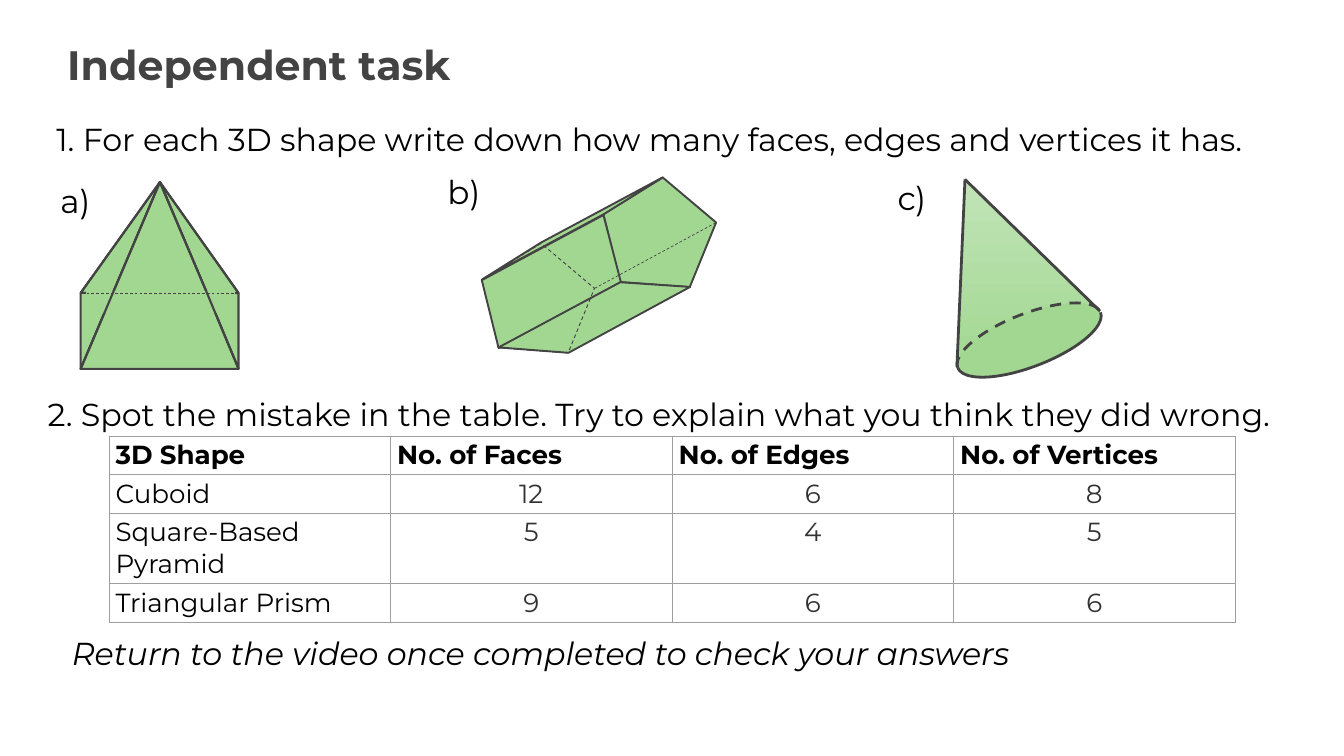
"""Build the independent task slide on faces, edges and vertices of 3D shapes."""
from lxml import etree
from pptx import Presentation
from pptx.dml.color import RGBColor
from pptx.enum.dml import MSO_LINE
from pptx.enum.shapes import MSO_CONNECTOR, MSO_SHAPE
from pptx.enum.text import MSO_ANCHOR, MSO_AUTO_SIZE, PP_ALIGN
from pptx.oxml import parse_xml
from pptx.oxml.ns import nsdecls, qn
from pptx.util import Inches, Pt

FONT = "Montserrat"
BLACK = RGBColor(0x00, 0x00, 0x00)
DARK = RGBColor(0x43, 0x43, 0x43)
NUMBER = RGBColor(0x32, 0x32, 0x32)
GREEN = RGBColor(0xA2, 0xD7, 0x92)
CONE_TOP = RGBColor(0xC0, 0xE4, 0xB6)
CONE_BASE = RGBColor(0xA3, 0xD8, 0x93)
BORDER = RGBColor(0x9E, 0x9E, 0x9E)
LEFT, CENTER = PP_ALIGN.LEFT, PP_ALIGN.CENTER
TOP, NO_FIT = MSO_ANCHOR.TOP, MSO_AUTO_SIZE.NONE
DASH, STRAIGHT = MSO_LINE.DASH, MSO_CONNECTOR.STRAIGHT
PENTAGON, RECTANGLE = MSO_SHAPE.REGULAR_PENTAGON, MSO_SHAPE.RECTANGLE
ELLIPSE, ARC = MSO_SHAPE.OVAL, MSO_SHAPE.ARC
ARC_UNITS_PER_DEGREE = 0.6


def write(frame, text, spacing=1.0, align=LEFT, **formats):
    para = frame.paragraphs[0]
    para.alignment = align
    para.line_spacing = spacing
    span = para.add_run()
    span.text = text
    span.font.color.rgb = formats.pop("color")
    for name, value in {"name": FONT, "bold": False, **formats}.items():
        setattr(span.font, name, value)


def draw(kind, geometry, fill=None, line=DARK, width=0, dash=None):
    if kind == "edge":
        start, end = geometry
        shape = shapes.add_connector(STRAIGHT, *map(Inches, start + end))
        etree.SubElement(shape._element.spPr, qn("a:effectLst"))
    else:
        if kind in ("face", "path"):
            corners = [(Inches(x), Inches(y)) for x, y in geometry]
            builder = shapes.build_freeform(*corners[0])
            builder.add_line_segments(corners[1:], close=kind == "face")
            shape = builder.convert_to_shape()
        else:
            shape = shapes.add_shape(kind, *map(Inches, geometry))
        shape.shadow.inherit = False
        if fill is None:
            shape.fill.background()
        else:
            shape.fill.solid()
            shape.fill.fore_color.rgb = fill
    if width:
        shape.line.color.rgb = line
        shape.line.width = Pt(width)
        shape.line.dash_style = dash
    else:
        shape.line.fill.background()
    return shape


deck = Presentation()
deck.slide_width, deck.slide_height = Inches(20), Inches(11.25)
page = deck.slides.add_slide(deck.slide_layouts[5])
shapes = page.shapes

title = shapes.title
title.left, title.top, title.width, title.height = map(Inches, (1, 0.47, 14.44, 1.78))
title_format = {"margin_left": 0, "margin_top": 0, "margin_right": 0, "margin_bottom": 0,
                "vertical_anchor": TOP, "auto_size": NO_FIT, "word_wrap": True}
for name, value in title_format.items():
    setattr(title.text_frame, name, value)
write(title.text_frame, "Independent task", 1.15, size=Pt(44), bold=True, color=DARK)

apex = (2.38, 2.71)
back_left, inner_left, inner_right, back_right = [(x, 4.36) for x in (1.2, 1.68, 3.08, 3.55)]
front_left, front_right = (1.2, 5.49), (3.55, 5.49)
pyramid_faces = [
    [front_right, inner_right, back_right],
    [back_left, apex, inner_left],
    [inner_left, front_left, back_left],
    [apex, back_right, inner_right],
    [inner_right, inner_left, apex],
    [inner_right, front_right, front_left, inner_left],
]
for face in pyramid_faces:
    draw("face", face, GREEN, width=2.25)
for corner in (back_left, back_right):
    draw("edge", (apex, corner), width=2.25)
draw(RECTANGLE, (1.3, 4.34, 2.18, 0.31), GREEN, line=GREEN, width=2)
for front_edge in ([apex, inner_right, front_right], [apex, inner_left, front_left]):
    draw("path", front_edge, GREEN, width=2.25)
draw("edge", (back_right, back_left), width=0.75, dash=DASH)

PRISM_TURN = 292.2
near_end = draw(PENTAGON, (8.88, 2.69, 1.68, 1.6), GREEN, width=2)
prism_faces = [
    [(7.17, 4.16), (8.98, 3.19), (9.86, 2.64), (8.05, 3.61)],
    [(7.17, 4.17), (7.42, 5.18), (9.24, 4.2), (8.98, 3.2)],
    [(7.42, 5.17), (8.46, 5.25), (10.27, 4.27), (9.23, 4.2)],
]
for face in prism_faces:
    draw("face", face, GREEN, width=2)
far_end = draw(PENTAGON, (7.07, 3.67, 1.68, 1.6), width=1, dash=DASH)
for end in (near_end, far_end):
    end.rotation = PRISM_TURN
draw("edge", ((8.85, 4.29), (10.66, 3.31)), width=0.75, dash=DASH)

CONE_TURN = 248.8
tip, rim_left, rim_right = (14.36, 2.67), (14.24, 5.46), (16.37, 4.63)
cone_base = (14.92, 3.92, 0.79, 2.28)
cone_side = draw("face", [rim_left, rim_right, tip])
cone_side.fill.gradient()
cone_side.fill.gradient_angle = 270
for stop, color in zip(cone_side.fill.gradient_stops, (CONE_TOP, CONE_BASE)):
    stop.color.rgb = color
draw(ELLIPSE, cone_base, GREEN).rotation = CONE_TURN
for start_degree, end_degree, dash in ((270, 90, DASH), (90, 270, None)):
    rim = draw(ARC, cone_base, width=3, dash=dash)
    rim.rotation = CONE_TURN
    rim.adjustments[0] = start_degree * ARC_UNITS_PER_DEGREE
    rim.adjustments[1] = end_degree * ARC_UNITS_PER_DEGREE
for rim_point in (rim_left, rim_right):
    draw("edge", (rim_point, tip), width=3)

rows = [
    ("3D Shape", "No. of Faces", "No. of Edges", "No. of Vertices"),
    ("Cuboid", "12", "6", "8"),
    ("Square-Based Pyramid", "5", "4", "5"),
    ("Triangular Prism", "9", "6", "6"),
]
column_width = 4.19
row_heights = [0.57, 0.57, 1.04, 0.57]
holder = shapes.add_table(len(rows), len(rows[0]), Inches(1.62), Inches(6.49),
                          Inches(column_width * len(rows[0])), Inches(sum(row_heights)))
table = holder.table
table.first_row = table.horz_banding = False
for column in table.columns:
    column.width = Inches(column_width)
for row_index, (row, height) in enumerate(zip(rows, row_heights)):
    table.rows[row_index].height = Inches(height)
    for column_index, text in enumerate(row):
        cell = table.cell(row_index, column_index)
        is_header = row_index == 0
        is_count = not is_header and column_index > 0
        write(cell.text_frame, text, align=CENTER if is_count else LEFT,
              size=Pt(28), bold=is_header, color=NUMBER if is_count else BLACK)
        properties = cell._tc.get_or_add_tcPr()
        for side in ("lnL", "lnR", "lnT", "lnB"):
            properties.append(parse_xml(
                f'<a:{side} {nsdecls("a")} w="{Pt(0.75)}"><a:solidFill>'
                f'<a:srgbClr val="{BORDER}"/></a:solidFill></a:{side}>'))
        cell.fill.background()

sentences = [
    ("1. For each 3D shape write down how many faces, edges and vertices it has.",
     0.74, 1.56, 18.86, False),
    ("2. Spot the mistake in the table. Try to explain what you think they did wrong.",
     0.61, 5.66, 19.08, False),
    ("Return to the video once completed to check your answers", 0.97, 9.21, 14.76, True),
]
labels = [("a)", 0.8, 2.47), ("b)", 6.56, 2.34), ("c)", 13.26, 2.43)]
texts = [(*sentence, 34) for sentence in sentences]
texts += [(*label, 0.7, False, 35) for label in labels]
for text, left, top, width, italic, size in texts:
    box = shapes.add_textbox(*map(Inches, (left, top, width, 0.8)))
    box.text_frame.word_wrap = True
    write(box.text_frame, text, 1.3, size=Pt(size), italic=italic, color=BLACK)

deck.save("out.pptx")
